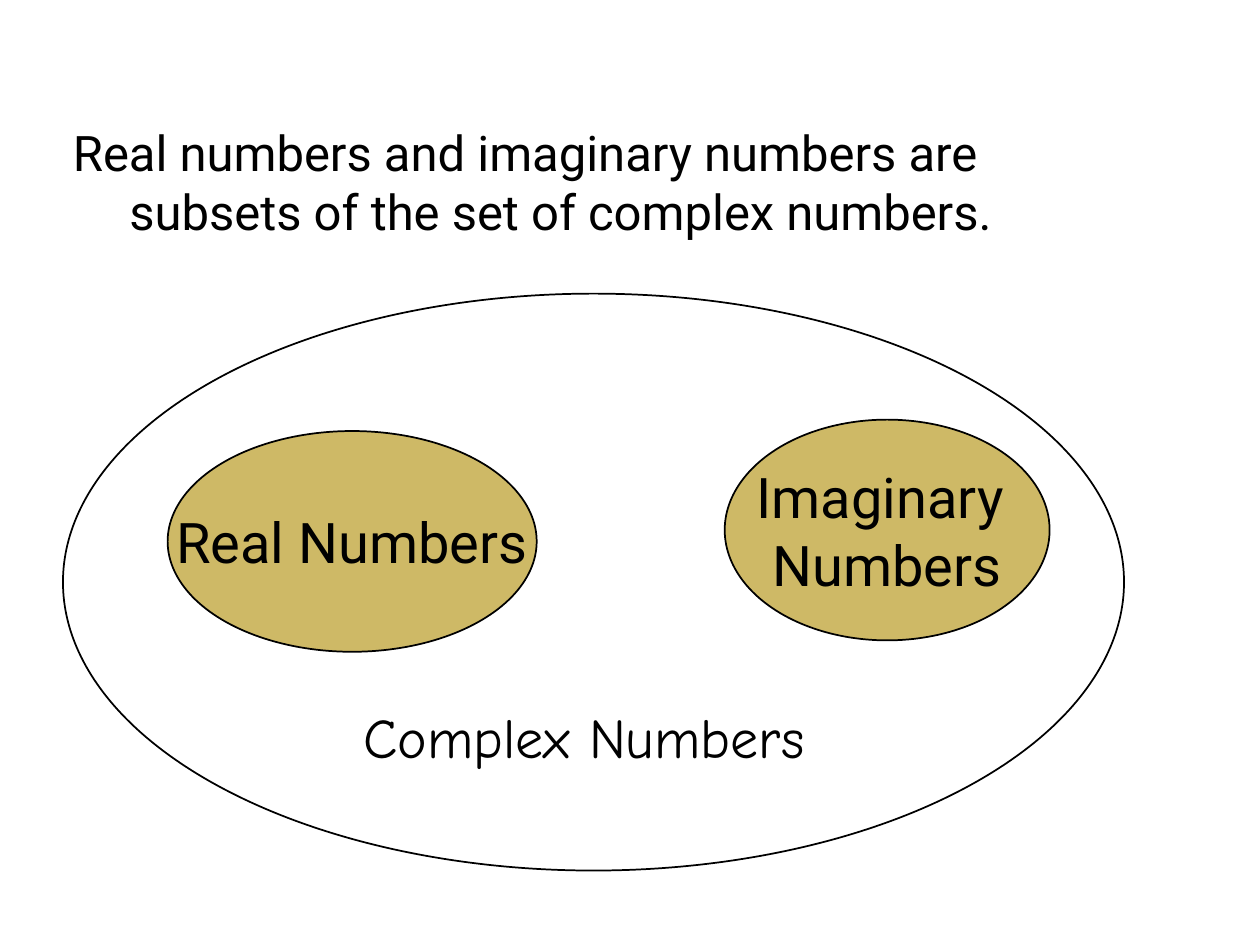
"""Build a slide showing real and imaginary numbers inside the complex numbers."""
from pptx import Presentation, util as u
from pptx.dml.color import RGBColor
from pptx.enum import shapes, text

INK, GOLD = "000000", "CEB966"
STATEMENT = "Real numbers and imaginary numbers are subsets of the set of complex numbers."
STATEMENT_BOX = (0.84, 2.34, 21.59, 2.97)
SETS = [
    {"lines": ["Real Numbers"], "box": (3.38, 8.69, 7.44, 4.45),
     "font": "Roboto", "fill": GOLD, "top": 0.13},
    {"lines": ["Imaginary ", "Numbers"], "box": (14.61, 8.46, 6.55, 4.45),
     "font": "Roboto", "fill": GOLD, "top": 0.13},
    {"lines": ["Complex Numbers "], "box": (1.27, 5.92, 21.39, 11.63),
     "font": "Comic Neue", "fill": None, "top": 6.35},
]


def color(value):
    return RGBColor.from_string(value)


def add_span(para, wording, font, size):
    span = para.add_run()
    span.text = wording
    span.font.name = font
    span.font.size = u.Pt(size)
    span.font.color.rgb = color(INK)


def add_statement(page):
    box = page.shapes.add_textbox(*map(u.Cm, STATEMENT_BOX))
    box.text_frame.word_wrap = True
    para = box.text_frame.paragraphs[0]
    properties = para._p.get_or_add_pPr()
    properties.set("marL", str(u.Cm(1.52)))
    properties.set("indent", str(u.Cm(-1.14)))
    add_span(para, STATEMENT, "Roboto", 28)


def add_set(page, item):
    oval = page.shapes.add_shape(shapes.MSO_SHAPE.OVAL, *map(u.Cm, item["box"]))
    oval.shadow.inherit = False
    oval.line.color.rgb = color(INK)
    oval.line.width = u.Pt(1)
    if item["fill"]:
        oval.fill.solid()
        oval.fill.fore_color.rgb = color(item["fill"])
    else:
        oval.fill.background()
    frame = oval.text_frame
    frame.word_wrap = False
    frame.vertical_anchor = text.MSO_ANCHOR.MIDDLE
    frame.margin_top = u.Cm(item["top"])
    for index, line in enumerate(item["lines"]):
        para = frame.add_paragraph() if index else frame.paragraphs[0]
        para.alignment = text.PP_ALIGN.CENTER
        add_span(para, line, item["font"], 32)


def main():
    deck = Presentation()
    deck.slide_width, deck.slide_height = u.Cm(25.4), u.Cm(19.05)
    page = deck.slides.add_slide(deck.slide_layouts[6])
    *subsets, whole = SETS
    for item in subsets:
        add_set(page, item)
    add_statement(page)
    add_set(page, whole)
    deck.save("out.pptx")


if __name__ == "__main__":
    main()
